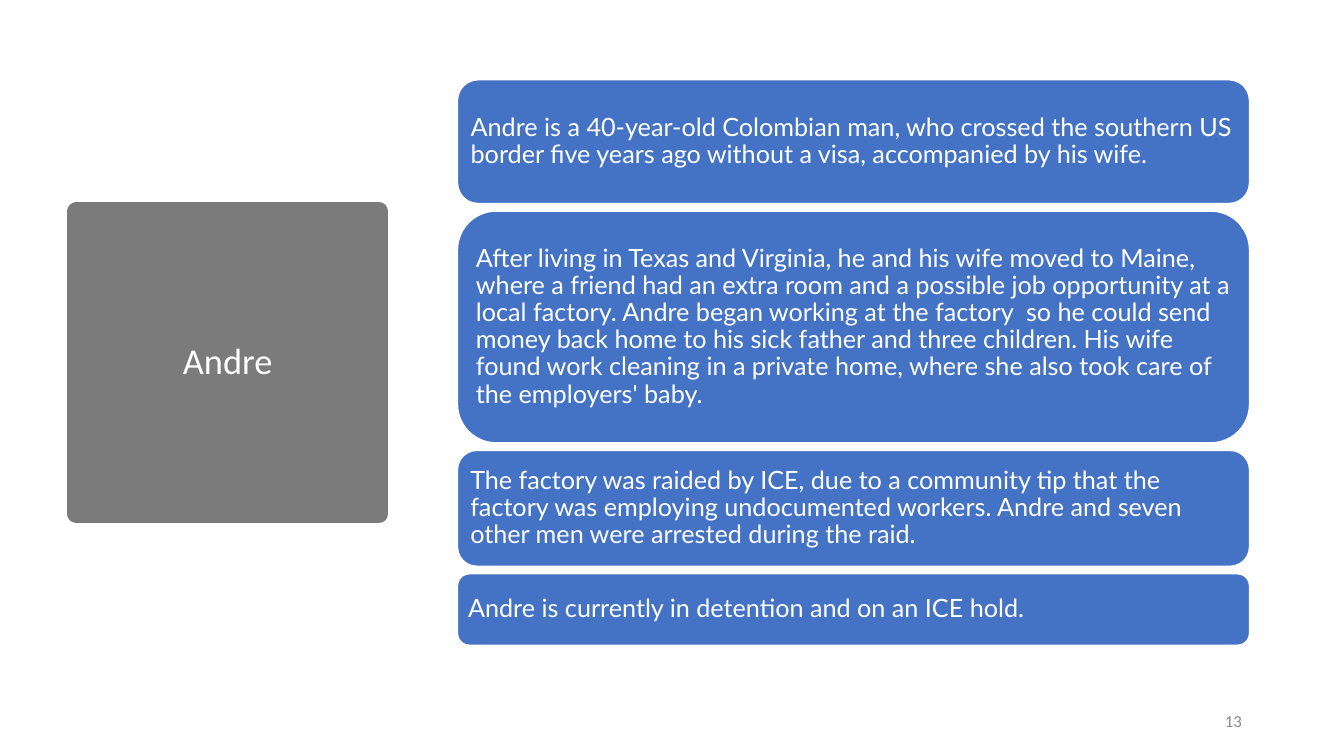
import lxml.etree
import pptx
import pptx.dml.color
import pptx.enum.shapes
import pptx.enum.text
import pptx.oxml.ns
import pptx.util

Cm = pptx.util.Cm
Pt = pptx.util.Pt
Align = pptx.enum.text.PP_ALIGN
Shape = pptx.enum.shapes.MSO_SHAPE

WHITE, BLUE, GRAY, PALE_GRAY = "FFFFFF", "4472C4", "7B7B7B", "898989"


def color(value):
    return pptx.dml.color.RGBColor.from_string(value)


class CaseSlide:
    """Holds the style and the current slide."""

    heading_font = "Calibri"
    story_font = "Lato"

    def __init__(self, deck):
        self.page = deck.slides.add_slide(deck.slide_layouts[6])

    def set_text(self, box, text, font, size, ink, align, spacing, inset):
        frame = box.text_frame
        frame_format = {
            "word_wrap": True,
            "vertical_anchor": pptx.enum.text.MSO_ANCHOR.MIDDLE,
            "margin_left": Cm(inset), "margin_right": Cm(inset),
            "margin_top": Cm(inset), "margin_bottom": Cm(inset),
        }
        for name, value in frame_format.items():
            setattr(frame, name, value)
        para = frame.paragraphs[0]
        para.alignment, para.line_spacing = align, spacing
        span = para.add_run()
        span.text = text
        for name, value in {"name": font, "size": Pt(size)}.items():
            setattr(span.font, name, value)
        span.font.color.rgb = color(ink)

    def panel(self, kind, area, fill, line, line_width):
        box = self.page.shapes.add_shape(kind, *map(Cm, area))
        box.shadow.inherit = False
        box.fill.solid()
        box.fill.fore_color.rgb = color(fill)
        box.line.color.rgb = color(line)
        box.line.width = Pt(line_width)
        return box

    def name_block(self, text, area):
        box = self.panel(Shape.RECTANGLE, area, GRAY, GRAY, 13.75)
        # The thick outline rounds the corners of the square
        outline = box.element.spPr.find(pptx.oxml.ns.qn("a:ln"))
        lxml.etree.SubElement(outline, pptx.oxml.ns.qn("a:round"))
        self.set_text(box, text, self.heading_font, 26, WHITE, Align.CENTER, 0.9, 0.25)

    def story_block(self, text, area):
        box = self.panel(Shape.ROUNDED_RECTANGLE, area, BLUE, WHITE, 1)
        self.set_text(box, text, self.story_font, 18, WHITE, Align.LEFT, 0.9, 0.18)

    def page_number(self, text, area):
        box = self.page.shapes.add_textbox(*map(Cm, area))
        self.set_text(box, text, self.heading_font, 12, PALE_GRAY, Align.RIGHT, 1.0, 0.25)


def main():
    deck = pptx.Presentation()
    deck.slide_width, deck.slide_height = Cm(33.87), Cm(19.05)
    slide = CaseSlide(deck)

    # Name of the person
    slide.name_block("Andre", (1.93, 5.33, 7.62, 7.62))

    # Story, stacked from top to bottom: height and text
    story = [
        (3.12, "Andre is a 40-year-old Colombian man, who crossed the southern US "
               "border five years ago without a visa, accompanied by his wife."),
        (5.84, "After living in Texas and Virginia, he and his wife moved to Maine, "
               "where a friend had an extra room and a possible job opportunity at a "
               "local factory. Andre began working at the factory  so he could send "
               "money back home to his sick father and three children. His wife "
               "found work cleaning in a private home, where she also took care of "
               "the employers' baby."),
        (2.92, "The factory was raided by ICE, due to a community tip that the "
               "factory was employing undocumented workers. Andre and seven "
               "other men were arrested during the raid."),
        (1.8, "Andre is currently in detention and on an ICE hold."),
    ]
    top, gap = 2.01, 0.19
    for height, text in story:
        slide.story_block(text, (11.53, top, 19.96, height))
        top += height + gap

    # Page number
    slide.page_number("13", (23.93, 17.65, 7.62, 1.02))

    deck.save("out.pptx")


if __name__ == "__main__":
    main()
